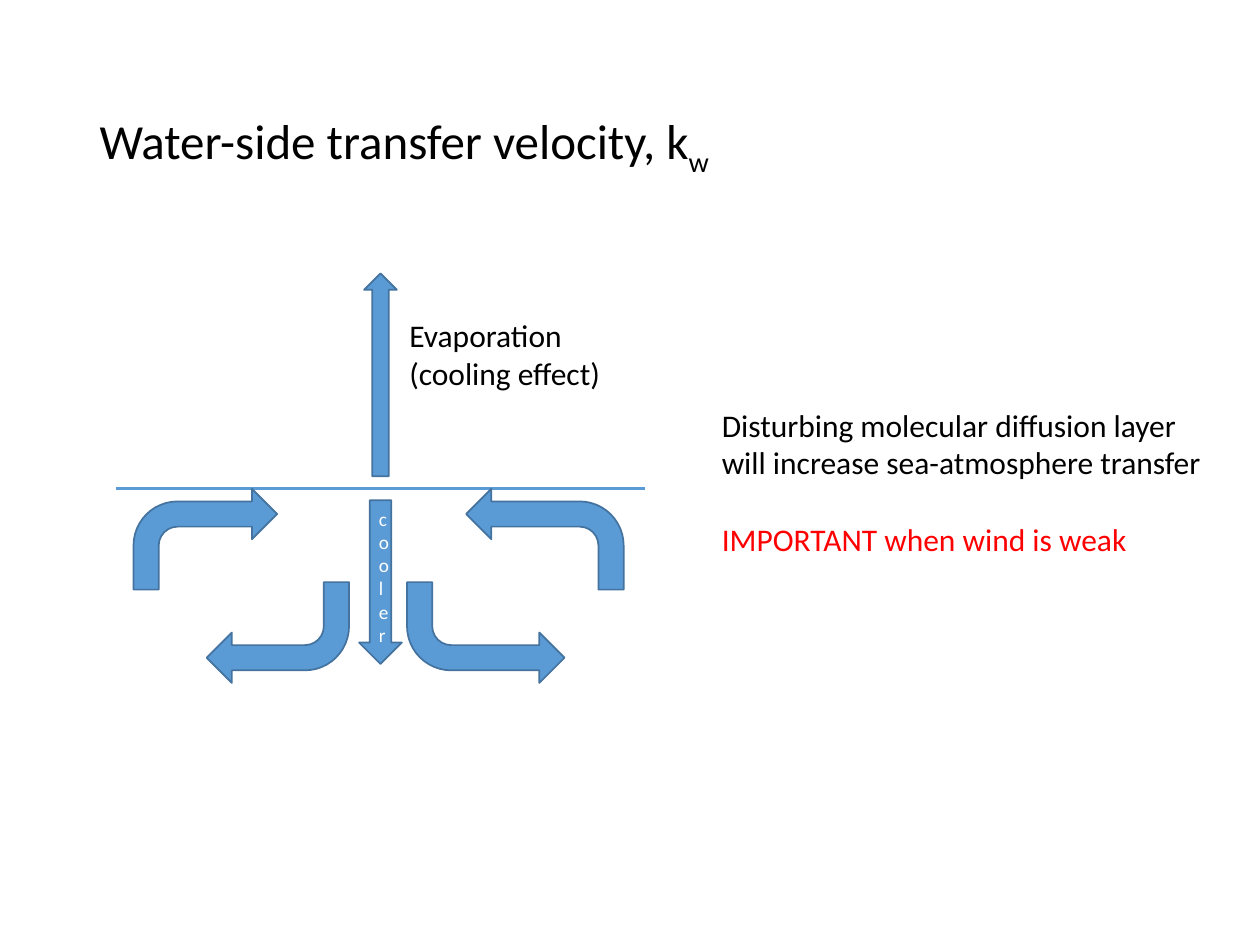
import pptx
import pptx.dml.color
import pptx.enum.shapes
import pptx.enum.text
import pptx.oxml.ns
import pptx.util
from lxml import etree
from pptx.util import Inches

COLORS = {"text": "000000", "accent": "FF0000", "arrow": "5B9BD5",
          "outline": "43739E", "label": "FFFFFF"}
FONT = "Calibri"
SHAPES = pptx.enum.shapes.MSO_SHAPE


def rgb(name):
    """Return the named colour."""
    return pptx.dml.color.RGBColor.from_string(COLORS[name])


def format_font(font, size, color):
    """Set typeface, size and colour."""
    font.name = FONT
    font.size = pptx.util.Pt(size)
    font.color.rgb = rgb(color)


def add_title(slide, left, top, width, height):
    """Place the title with its subscript."""
    title = slide.shapes.title
    title.left, title.top, title.width, title.height = map(Inches, (left, top, width, height))
    frame = title.text_frame
    frame.auto_size = pptx.enum.text.MSO_AUTO_SIZE.NONE
    frame.vertical_anchor = pptx.enum.text.MSO_ANCHOR.MIDDLE
    paragraph = frame.paragraphs[0]
    paragraph.alignment = pptx.enum.text.PP_ALIGN.LEFT
    paragraph.line_spacing = 0.9
    for text in ("Water-side transfer velocity, k", "w"):
        run = paragraph.add_run()
        run.text = text
        format_font(run.font, 28, "text")
    title.element.xpath(".//a:rPr")[-1].set("baseline", "-25000")


def add_text(slide, left, top, width, height, lines):
    """Add an unwrapped text box from (text, colour, space before) lines."""
    box = slide.shapes.add_textbox(*map(Inches, (left, top, width, height)))
    frame = box.text_frame
    frame.word_wrap = False
    frame.auto_size = pptx.enum.text.MSO_AUTO_SIZE.SHAPE_TO_FIT_TEXT
    for index, (text, color, space) in enumerate(lines):
        paragraph = frame.add_paragraph() if index else frame.paragraphs[0]
        paragraph.text = text
        paragraph.space_before = pptx.util.Pt(space)
        format_font(paragraph.font, 18, color)


def add_arrow(slide, kind, left, top, width, height, rotation=0, mirrored=False):
    """Add a block arrow, optionally turned and mirrored."""
    arrow = slide.shapes.add_shape(kind, *map(Inches, (left, top, width, height)))
    arrow.shadow.inherit = False
    arrow.fill.solid()
    arrow.fill.fore_color.rgb = rgb("arrow")
    arrow.line.color.rgb = rgb("outline")
    arrow.line.width = pptx.util.Pt(1)
    arrow.rotation = rotation
    if mirrored:
        arrow.element.spPr.find(pptx.oxml.ns.qn("a:xfrm")).set("flipH", "1")
    return arrow


def add_surface(slide, left, top, width):
    """Draw the water surface line."""
    line = slide.shapes.add_connector(
        pptx.enum.shapes.MSO_CONNECTOR.STRAIGHT,
        *map(Inches, (left, top, left + width, top)))
    line.line.color.rgb = rgb("arrow")
    line.line.width = pptx.util.Pt(1.75)
    etree.SubElement(line.element.spPr, pptx.oxml.ns.qn("a:effectLst"))


def add_circulation(slide, left, top, width, height):
    """Draw evaporation above the surface and the circulation below it."""
    surface = top + 1.71
    center = left + width / 2
    bend_height = 0.8
    lower = top + height - bend_height
    add_surface(slide, left, surface, width)
    bends = ((0.72, lower, 1.13, 180, False), (2.31, lower, 1.25, 180, True),
             (2.78, surface, 1.25, 0, True), (0.14, surface, 1.14, 0, False))
    for offset, bend_top, bend_width, rotation, mirrored in bends:
        add_arrow(slide, SHAPES.BENT_ARROW, left + offset, bend_top,
                  bend_width, bend_height, rotation, mirrored)
    sinking = add_arrow(slide, SHAPES.DOWN_ARROW, center - 0.17, surface + 0.09, 0.34, 1.3)
    sinking.text_frame.word_wrap = True
    sinking.text_frame.vertical_anchor = pptx.enum.text.MSO_ANCHOR.MIDDLE
    paragraph = sinking.text_frame.paragraphs[0]
    paragraph.text = "cooler"
    paragraph.alignment = pptx.enum.text.PP_ALIGN.CENTER
    format_font(paragraph.font, 11, "label")
    add_arrow(slide, SHAPES.UP_ARROW, center - 0.13, top, 0.26, 1.61)
    add_text(slide, center + 0.13, top + 0.29, 1.74, 0.71,
             [("Evaporation", "text", 0), ("(cooling effect)", "text", 0)])


def main():
    """Build and save the slide."""
    presentation = pptx.Presentation()
    presentation.slide_width = Inches(10)
    presentation.slide_height = Inches(7.5)
    slide = presentation.slides.add_slide(presentation.slide_layouts[5])
    add_title(slide, 0.69, 0.4, 8.62, 1.45)
    add_circulation(slide, 0.92, 2.17, 4.2, 3.25)
    add_text(slide, 5.63, 3.17, 4.05, 1.31,
             [("Disturbing molecular diffusion layer", "text", 0),
              ("will increase sea-atmosphere transfer", "text", 0),
              ("IMPORTANT when wind is weak", "accent", 22)])
    presentation.save("out.pptx")


if __name__ == "__main__":
    main()
